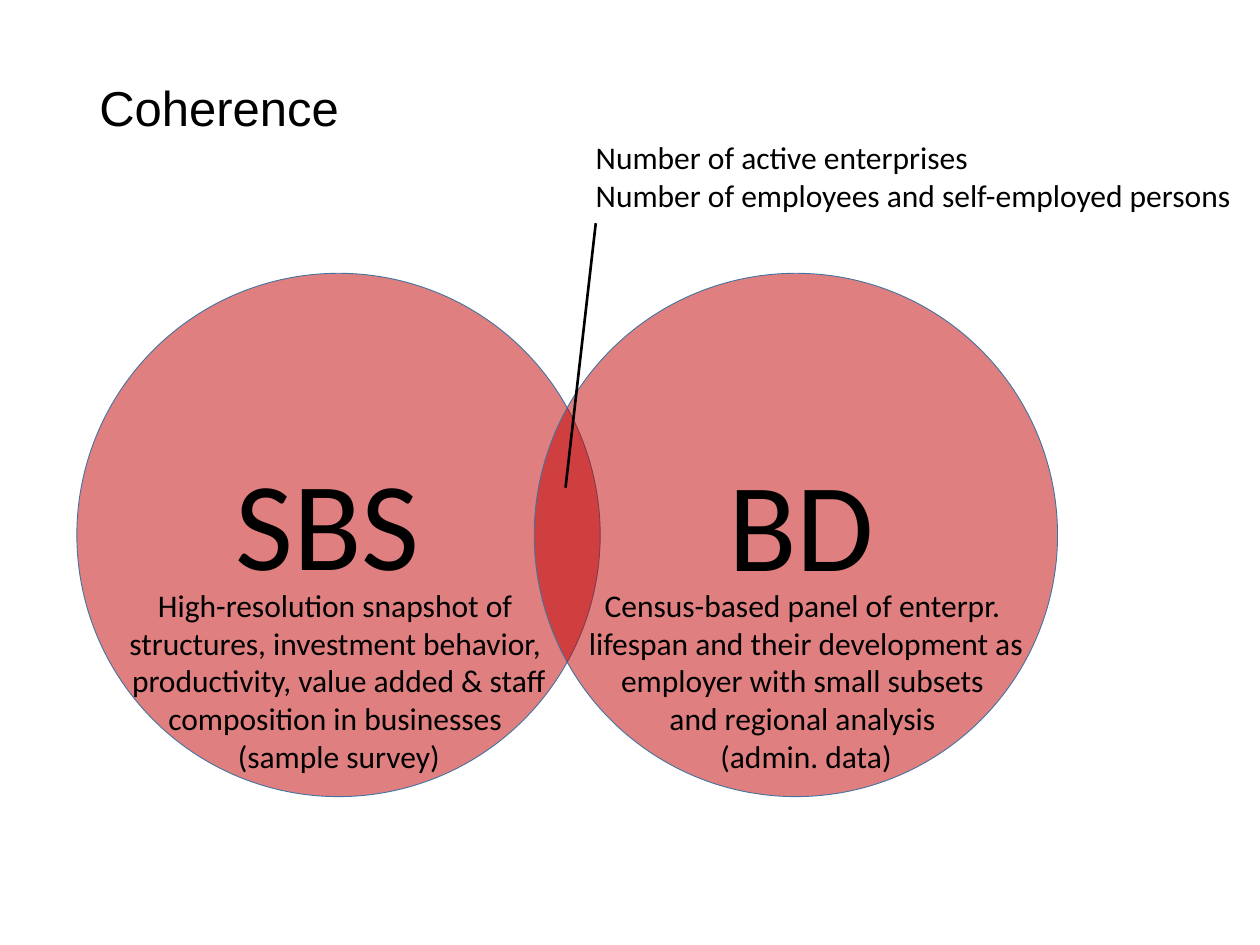
import dataclasses

import pptx
import pptx.dml.color
import pptx.enum.shapes
import pptx.enum.text
import pptx.oxml
import pptx.oxml.ns
import pptx.util

Cm = pptx.util.Cm
Pt = pptx.util.Pt
ALIGN = pptx.enum.text.PP_ALIGN
BLACK = "000000"
TOP, SIZE = 5.51, 10.55


@dataclasses.dataclass
class Label:
    text: str
    left: float
    top: float
    width: float
    height: float
    size: int = 18
    align: ALIGN = ALIGN.LEFT


def color(code: str) -> pptx.dml.color.RGBColor:
    return pptx.dml.color.RGBColor.from_string(code)


def style(frame, font: str, size: int, align: ALIGN) -> None:
    for para in frame.paragraphs:
        para.alignment = align
        for run in para.runs:
            run.font.name = font
            run.font.size = Pt(size)
            run.font.color.rgb = color(BLACK)


def add_circle(slide, left: float) -> None:
    oval = slide.shapes.add_shape(
        pptx.enum.shapes.MSO_SHAPE.OVAL, Cm(left), Cm(TOP), Cm(SIZE), Cm(SIZE))
    oval.shadow.inherit = False
    oval.fill.solid()
    oval.fill.fore_color.rgb = color("C00000")
    oval.line.color.rgb = color("43739E")
    oval.line.width = Pt(0.5)
    # Half transparent, so that the overlap shows darker
    fill = oval.fill._xPr.find(pptx.oxml.ns.qn("a:solidFill"))
    alpha = pptx.oxml.parse_xml(
        f'<a:alpha {pptx.oxml.ns.nsdecls("a")} val="50000"/>')
    fill[0].append(alpha)


def add_label(slide, label: Label) -> None:
    box = slide.shapes.add_textbox(
        Cm(label.left), Cm(label.top), Cm(label.width), Cm(label.height))
    frame = box.text_frame
    frame.word_wrap = True
    frame.margin_left = frame.margin_right = 0
    frame.margin_top = frame.margin_bottom = 0
    frame.text = label.text
    style(frame, "Calibri", label.size, label.align)


def add_line(slide, start: tuple[float, float], end: tuple[float, float]) -> None:
    line = slide.shapes.add_connector(
        pptx.enum.shapes.MSO_CONNECTOR.STRAIGHT,
        *(Cm(value) for value in start + end))
    line.line.color.rgb = color(BLACK)
    line.line.width = Pt(1.5)
    line._element.spPr.append(pptx.oxml.parse_xml(
        f'<a:effectLst {pptx.oxml.ns.nsdecls("a")}/>'))


LABELS = [
    Label("SBS", 4.75, 8.97, 3.91, 2.54, 72),
    Label("BD", 14.68, 8.99, 3.2, 2.54, 72),
    Label("Number of active enterprises\n"
          "Number of employees and self-employed persons",
          12.01, 2.79, 13.1, 1.73),
    Label("High-resolution snapshot of \v"
          "structures, investment behavior, \v"
          "productivity, value added & staff\v"
          "composition in businesses \n"
          "(sample survey)",
          2.23, 11.81, 9.2, 3.9, align=ALIGN.CENTER),
    Label("Census-based panel of enterpr. \v"
          "lifespan and their development as\v"
          "employer with small subsets \n"
          "and regional analysis \n"
          "(admin. data)",
          11.65, 11.81, 9.2, 3.9, align=ALIGN.CENTER),
]


def main() -> None:
    deck = pptx.Presentation()
    deck.slide_width, deck.slide_height = Cm(25.4), Cm(19.05)
    slide = deck.slides.add_slide(deck.slide_layouts[5])

    # Title
    title = slide.shapes.title
    title.left, title.top = Cm(1.75), Cm(1.02)
    title.width, title.height = Cm(21.89), Cm(2.41)
    frame = title.text_frame
    frame.text = "Coherence"
    frame.vertical_anchor = pptx.enum.text.MSO_ANCHOR.MIDDLE
    frame.paragraphs[0].line_spacing = 0.9
    style(frame, "Arial", 28, ALIGN.LEFT)

    # Overlapping circles
    for left in (1.55, 10.77):
        add_circle(slide, left)

    # Texts, and the line from the overlap to its note
    for label in LABELS:
        add_label(slide, label)
    add_line(slide, (12.01, 4.5), (11.4, 9.83))

    deck.save("out.pptx")


if __name__ == "__main__":
    main()
